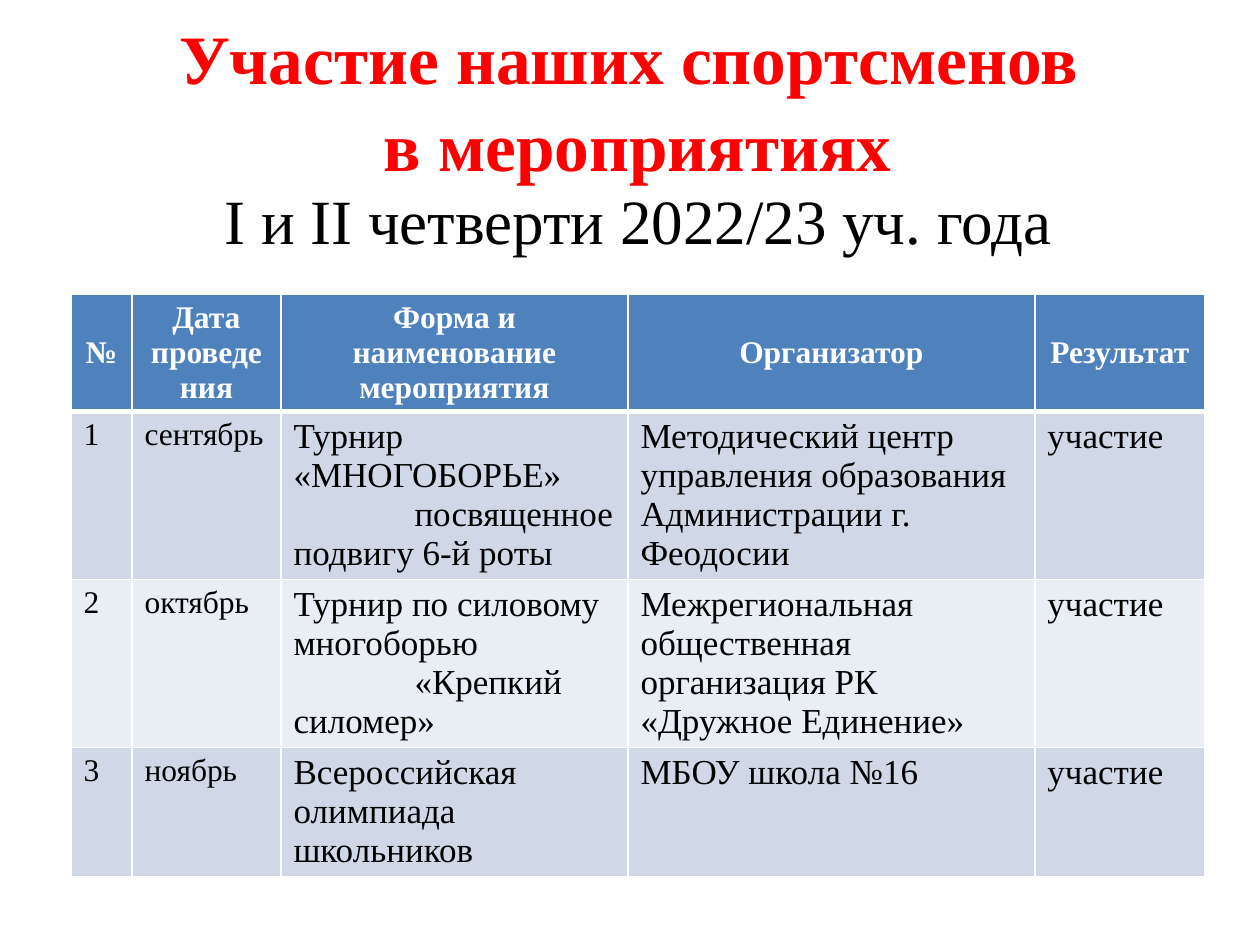
"""Build the slide on athletes' participation in events, with its table."""
from dataclasses import dataclass

from lxml.etree import SubElement
from pptx import Presentation
from pptx.dml.color import RGBColor
from pptx.enum.text import MSO_ANCHOR, PP_ALIGN
from pptx.oxml.ns import qn
from pptx.util import Emu, Pt

PX_PER_INCH = 126
FONT = "Times New Roman"
RED = RGBColor(0xFF, 0x00, 0x00)
BLACK = RGBColor(0x00, 0x00, 0x00)
WHITE = RGBColor(0xFF, 0xFF, 0xFF)
HEADER_BLUE = RGBColor(0x4F, 0x81, 0xBD)
BANDS = (RGBColor(0xD0, 0xD8, 0xE8), RGBColor(0xE9, 0xED, 0xF4))

COLUMN_WIDTHS = (61, 149, 347, 407, 170)
HEADER_HEIGHT = 116
DETAIL_INDENT = 121
HEADINGS = ("№", "Дата проведения", "Форма и наименование мероприятия",
            "Организатор", "Результат")


@dataclass(frozen=True)
class Event:
    """One event row of the table."""
    number: str
    month: str
    name: str
    organizer: str
    result: str
    height: int


@dataclass(frozen=True)
class TextStyle:
    """Look of a piece of text."""
    size: float
    color: RGBColor
    bold: bool = False
    align: PP_ALIGN = PP_ALIGN.LEFT


EVENTS = (
    Event("1", "сентябрь", "Турнир «МНОГОБОРЬЕ»\nпосвященное подвигу 6-й роты",
          "Методический центр управления образования Администрации г. Феодосии",
          "участие", 168),
    Event("2", "октябрь", "Турнир по силовому многоборью\n«Крепкий силомер»",
          "Межрегиональная общественная организация РК «Дружное Единение»",
          "участие", 168),
    Event("3", "ноябрь", "Всероссийская олимпиада школьников",
          "МБОУ школа №16", "участие", 129),
)

HEADLINE_STYLE = TextStyle(39.6, RED, True, PP_ALIGN.CENTER)
PERIOD_STYLE = TextStyle(36, BLACK, False, PP_ALIGN.CENTER)
HEADING_STYLE = TextStyle(18, WHITE, True, PP_ALIGN.CENTER)
SMALL_STYLE = TextStyle(18, BLACK)
LARGE_STYLE = TextStyle(20, BLACK)


def px(length: int) -> Emu:
    """Turn pixels into EMU."""
    return Emu(round(length * 914400 / PX_PER_INCH))


def write(frame, text: str, style: TextStyle) -> None:
    """Fill a text frame and format all its runs."""
    frame.text = text
    for paragraph in frame.paragraphs:
        paragraph.alignment = style.align
        for run in paragraph.runs:
            run.font.name = FONT
            run.font.size = Pt(style.size)
            run.font.bold = style.bold
            run.font.color.rgb = style.color


def set_borders(cell, top: int, bottom: int) -> None:
    """Give a cell white borders, with top and bottom widths in points."""
    properties = cell._tc.get_or_add_tcPr()
    for tag, width in (("a:lnL", 1), ("a:lnR", 1), ("a:lnT", top), ("a:lnB", bottom)):
        line = SubElement(properties, qn(tag), w=str(Pt(width)))
        SubElement(SubElement(line, qn("a:solidFill")), qn("a:srgbClr"), val=str(WHITE))


def fill_cell(cell, text: str, style: TextStyle, color: RGBColor,
              top: int = 1, bottom: int = 1) -> None:
    """Write, border and colour one table cell."""
    write(cell.text_frame, text, style)
    set_borders(cell, top, bottom)
    cell.fill.solid()
    cell.fill.fore_color.rgb = color
    for detail in cell.text_frame.paragraphs[1:]:
        detail._p.get_or_add_pPr().set("indent", str(px(DETAIL_INDENT)))


def add_events_table(slide) -> None:
    """Add the table of events."""
    heights = (HEADER_HEIGHT, *(event.height for event in EVENTS))
    table = slide.shapes.add_table(
        len(heights), len(COLUMN_WIDTHS), px(71), px(294),
        px(sum(COLUMN_WIDTHS)), px(sum(heights))).table
    for column, width in zip(table.columns, COLUMN_WIDTHS):
        column.width = px(width)
    for row, height in zip(table.rows, heights):
        row.height = px(height)

    for column, heading in enumerate(HEADINGS):
        cell = table.cell(0, column)
        fill_cell(cell, heading, HEADING_STYLE, HEADER_BLUE, bottom=3)
        cell.vertical_anchor = MSO_ANCHOR.MIDDLE

    for row, event in enumerate(EVENTS, start=1):
        values = (event.number, event.month, event.name, event.organizer, event.result)
        band = BANDS[(row - 1) % len(BANDS)]
        for column, value in enumerate(values):
            style = SMALL_STYLE if column < 2 else LARGE_STYLE
            fill_cell(table.cell(row, column), value, style, band,
                      top=3 if row == 1 else 1)


def add_period(slide) -> None:
    """Place the school period in the title placeholder."""
    period = slide.shapes.title
    period.left, period.top, period.width, period.height = map(px, (71, 171, 1134, 97))
    write(period.text_frame, "I и II четверти 2022/23 уч. года", PERIOD_STYLE)
    period.text_frame.vertical_anchor = MSO_ANCHOR.MIDDLE


def add_headline(slide) -> None:
    """Add the red headline."""
    headline = slide.shapes.add_textbox(*map(px, (15, 16, 1245, 169))).text_frame
    headline.word_wrap = True
    headline.vertical_anchor = MSO_ANCHOR.MIDDLE
    write(headline, "Участие наших спортсменов \nв мероприятиях", HEADLINE_STYLE)
    for paragraph in headline.paragraphs:
        paragraph.space_before = Pt(2)


def main() -> None:
    """Build and save the presentation."""
    presentation = Presentation()
    presentation.slide_width = px(1260)
    presentation.slide_height = px(945)
    slide = presentation.slides.add_slide(presentation.slide_layouts[5])
    add_period(slide)
    add_events_table(slide)
    add_headline(slide)
    presentation.save("out.pptx")


if __name__ == "__main__":
    main()
